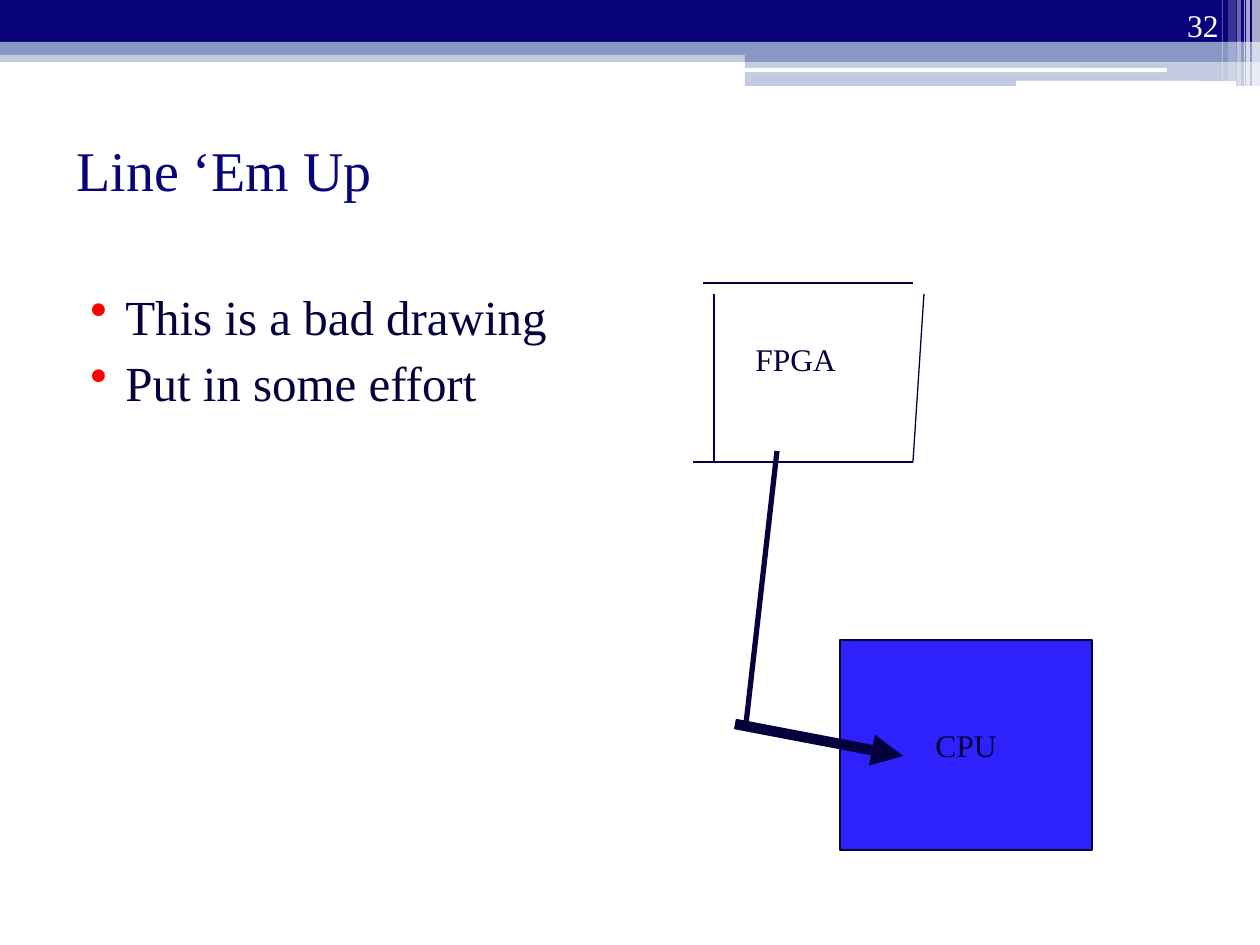
from dataclasses import dataclass

from lxml import etree
from pptx import Presentation
from pptx import util as u
from pptx.dml.color import RGBColor
from pptx.enum import shapes, text
from pptx.oxml.ns import qn


@dataclass(frozen=True)
class Theme:
    font: str = "Times New Roman"
    navy: str = "09037B"
    steel: str = "8898C3"
    white: str = "FFFFFF"
    ink: str = "04013D"
    blue: str = "2D22FB"
    red: str = "FF0000"
    title_size: int = 32
    body_size: int = 28
    label_size: int = 18


theme = Theme()
SCALE = u.Inches(1) / 126


def px(*lengths):
    return [round(length * SCALE) for length in lengths]


def write(frame, *lines, size, color, align=text.PP_ALIGN.LEFT,
          anchor=text.MSO_ANCHOR.TOP, wrap=True, bullet=None, gap=0):
    frame.word_wrap = wrap
    frame.vertical_anchor = anchor
    for index, line in enumerate(lines):
        paragraph = frame.paragraphs[0] if index == 0 else frame.add_paragraph()
        paragraph.text = line
        paragraph.alignment = align
        if index:
            paragraph.space_before = u.Pt(gap)
        if bullet:
            properties = paragraph._p.get_or_add_pPr()
            properties.set("marL", str(px(50)[0]))
            properties.set("indent", str(px(-35)[0]))
            bullet_color = etree.SubElement(properties, qn("a:buClr"))
            etree.SubElement(bullet_color, qn("a:srgbClr"), val=theme.red)
            etree.SubElement(properties, qn("a:buChar"), char=bullet)
        paragraph.font.name = theme.font
        paragraph.font.size = u.Pt(size)
        paragraph.font.color.rgb = RGBColor.from_string(color)


presentation = Presentation()
presentation.slide_width, presentation.slide_height = px(1260, 945)
slide = presentation.slides.add_slide(presentation.slide_layouts[6])

RECTANGLE = shapes.MSO_SHAPE.RECTANGLE
ROUNDED = shapes.MSO_SHAPE.ROUNDED_RECTANGLE
header_bands = [
    (RECTANGLE, 0, 50, 1260, 12, theme.steel, 50),
    (RECTANGLE, 0, 0, 1260, 43, theme.navy, 100),
    (RECTANGLE, 0, 42, 1260, 13, theme.steel, 100),
    (RECTANGLE, 745, 49, 515, 13, theme.steel, 100),
    (RECTANGLE, 745, 61, 515, 25, theme.steel, 50),
    (ROUNDED, 745, 68, 422, 4, theme.white, 100),
    (ROUNDED, 1016, 81, 220, 5, theme.white, 100),
    (RECTANGLE, 1252, 0, 8, 86, theme.white, 65),
    (RECTANGLE, 1246, 0, 4, 86, theme.white, 65),
    (RECTANGLE, 1244, 0, 1, 86, theme.white, 60),
    (RECTANGLE, 1237, 0, 4, 86, theme.white, 40),
    (RECTANGLE, 1228, 0, 8, 81, theme.white, 20),
    (RECTANGLE, 1222, 0, 1, 81, theme.white, 30),
]
for preset, left, top, width, height, color, opacity in header_bands:
    band = slide.shapes.add_shape(preset, *px(left, top, width, height))
    band.shadow.inherit = False
    band.line.fill.background()
    band.fill.solid()
    band.fill.fore_color.rgb = RGBColor.from_string(color)
    if opacity < 100:
        fill_color = band.fill._xPr.find(qn("a:solidFill"))[0]
        etree.SubElement(fill_color, qn("a:alpha"), val=str(opacity * 1000))

slide_number = slide.shapes.add_textbox(*px(1126, 0, 105, 50))
write(slide_number.text_frame, "32", size=theme.label_size, color=theme.white,
      align=text.PP_ALIGN.RIGHT, anchor=text.MSO_ANCHOR.BOTTOM)

title = slide.shapes.add_textbox(*px(64, 96, 1134, 147))
write(title.text_frame, "Line ‘Em Up", size=theme.title_size, color=theme.navy,
      anchor=text.MSO_ANCHOR.MIDDLE)

body = slide.shapes.add_textbox(*px(63, 280, 1134, 626))
write(body.text_frame, "This is a bad drawing", "Put in some effort",
      size=theme.body_size, color=theme.ink, bullet="•", gap=4.4)

fpga_label = slide.shapes.add_textbox(*px(743, 334, 132, 63))
write(fpga_label.text_frame, "FPGA", size=theme.label_size, color=theme.ink)

cpu = slide.shapes.add_shape(RECTANGLE, *px(840, 640, 252, 210))
cpu.shadow.inherit = False
cpu.fill.solid()
cpu.fill.fore_color.rgb = RGBColor.from_string(theme.blue)
cpu.line.color.rgb = RGBColor.from_string(theme.ink)
cpu.line.width = u.Pt(0.75)
write(cpu.text_frame, "CPU", size=theme.label_size, color=theme.ink,
      align=text.PP_ALIGN.CENTER, anchor=text.MSO_ANCHOR.MIDDLE, wrap=False)

strokes = [
    (714, 294, 714, 462, 0.75, False),
    (703, 283, 913, 283, 0.75, False),
    (924, 294, 913, 462, 0.75, False),
    (913, 462, 693, 462, 0.75, False),
    (777, 451, 746, 724, 3, False),
    (735, 724, 903, 756, 6, True),
]
for start_x, start_y, end_x, end_y, weight, has_arrow in strokes:
    stroke = slide.shapes.add_connector(
        shapes.MSO_CONNECTOR.STRAIGHT, *px(start_x, start_y, end_x, end_y))
    stroke.line.color.rgb = RGBColor.from_string(theme.ink)
    stroke.line.width = u.Pt(weight)
    if has_arrow:
        etree.SubElement(stroke.line._get_or_add_ln(), qn("a:tailEnd"), type="triangle")
    etree.SubElement(stroke._element.spPr, qn("a:effectLst"))

presentation.save("out.pptx")
